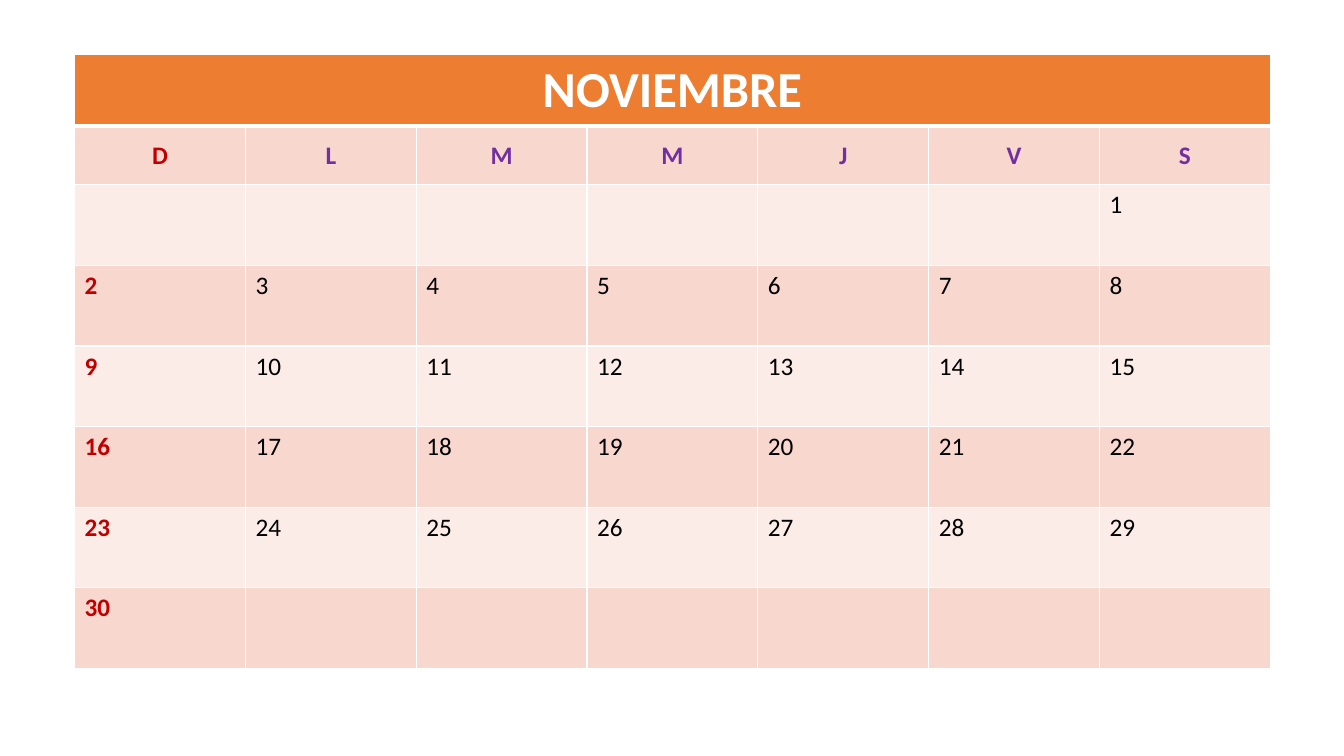
"""Builds a one-slide calendar for the month of November."""
import pptx
import pptx.dml.color
import pptx.enum.text
import pptx.oxml
import pptx.oxml.ns
import pptx.util

RGB = pptx.dml.color.RGBColor
WHITE = RGB(0xFF, 0xFF, 0xFF)
BLACK = RGB(0x00, 0x00, 0x00)
ORANGE = RGB(0xED, 0x7D, 0x31)
PEACH = RGB(0xF8, 0xD7, 0xCE)
PALE_PEACH = RGB(0xFC, 0xEC, 0xE8)
RED = RGB(0xC0, 0x00, 0x00)
PURPLE = RGB(0x70, 0x30, 0xA0)

FONT = "Calibri"
MONTH = "NOVIEMBRE"
WEEKDAYS = "DLMMJVS"
DAYS_IN_MONTH = 30
FIRST_WEEKDAY = 6
WEEKS = 6
MONTH_HEIGHT, WEEKDAY_HEIGHT, WEEK_HEIGHT = 69, 58, 80

CENTER = pptx.enum.text.PP_ALIGN.CENTER
LEFT = pptx.enum.text.PP_ALIGN.LEFT
MIDDLE = pptx.enum.text.MSO_ANCHOR.MIDDLE
TOP = pptx.enum.text.MSO_ANCHOR.TOP


def px(n):
    return pptx.util.Emu(n * 9144)


def write(tf, text, size=18, color=BLACK, bold=False, align=LEFT):
    p = tf.paragraphs[0]
    p.alignment = align
    r = p.add_run()
    r.text = text
    r.font.name = FONT
    r.font.size = pptx.util.Pt(size)
    r.font.bold = bold
    r.font.color.rgb = color


class CalendarSlide:
    def __init__(self, prs):
        self.slide = prs.slides.add_slide(prs.slide_layouts[6])
        self.line_color = WHITE

    def table(self, left, top, width, heights, columns):
        frame = self.slide.shapes.add_table(
            len(heights), columns, px(left), px(top), px(width), px(sum(heights)))
        table = frame.table
        table.first_row = False
        table.horz_banding = False
        for row, height in zip(table.rows, heights):
            row.height = px(height)
        return table

    def borders(self, cell, top=1, bottom=1):
        tcPr = cell._tc.get_or_add_tcPr()
        for side, width in (("L", 1), ("R", 1), ("T", top), ("B", bottom)):
            tcPr.append(pptx.oxml.parse_xml(
                f'<a:ln{side} {pptx.oxml.ns.nsdecls("a")} w="{pptx.util.Pt(width)}">'
                f'<a:solidFill><a:srgbClr val="{self.line_color}"/></a:solidFill>'
                f'</a:ln{side}>'))

    def cell(self, cell, text, fill, anchor=TOP, top=1, bottom=1, **text_format):
        self.borders(cell, top, bottom)
        cell.fill.solid()
        cell.fill.fore_color.rgb = fill
        cell.vertical_anchor = anchor
        if text:
            write(cell.text_frame, text, **text_format)


def main():
    prs = pptx.Presentation()
    prs.slide_width, prs.slide_height = px(1333), px(750)
    s = CalendarSlide(prs)
    heights = [MONTH_HEIGHT, WEEKDAY_HEIGHT] + [WEEK_HEIGHT] * WEEKS
    table = s.table(74, 54, 1186, heights, len(WEEKDAYS))

    table.cell(0, 0).merge(table.cell(0, len(WEEKDAYS) - 1))
    for col, weekday in enumerate(WEEKDAYS):
        s.cell(table.cell(0, col), MONTH if col == 0 else "", ORANGE, MIDDLE,
               bottom=3, size=36, color=WHITE, bold=True, align=CENTER)
        sunday = col == 0
        s.cell(table.cell(1, col), weekday, PEACH, MIDDLE, top=3,
               color=RED if sunday else PURPLE, bold=True, align=CENTER)
        for week in range(WEEKS):
            day = week * len(WEEKDAYS) + col - FIRST_WEEKDAY + 1
            s.cell(table.cell(week + 2, col),
                   str(day) if 1 <= day <= DAYS_IN_MONTH else "",
                   PEACH if week % 2 else PALE_PEACH,
                   color=RED if sunday else BLACK, bold=sunday)

    prs.save("out.pptx")


if __name__ == "__main__":
    main()
